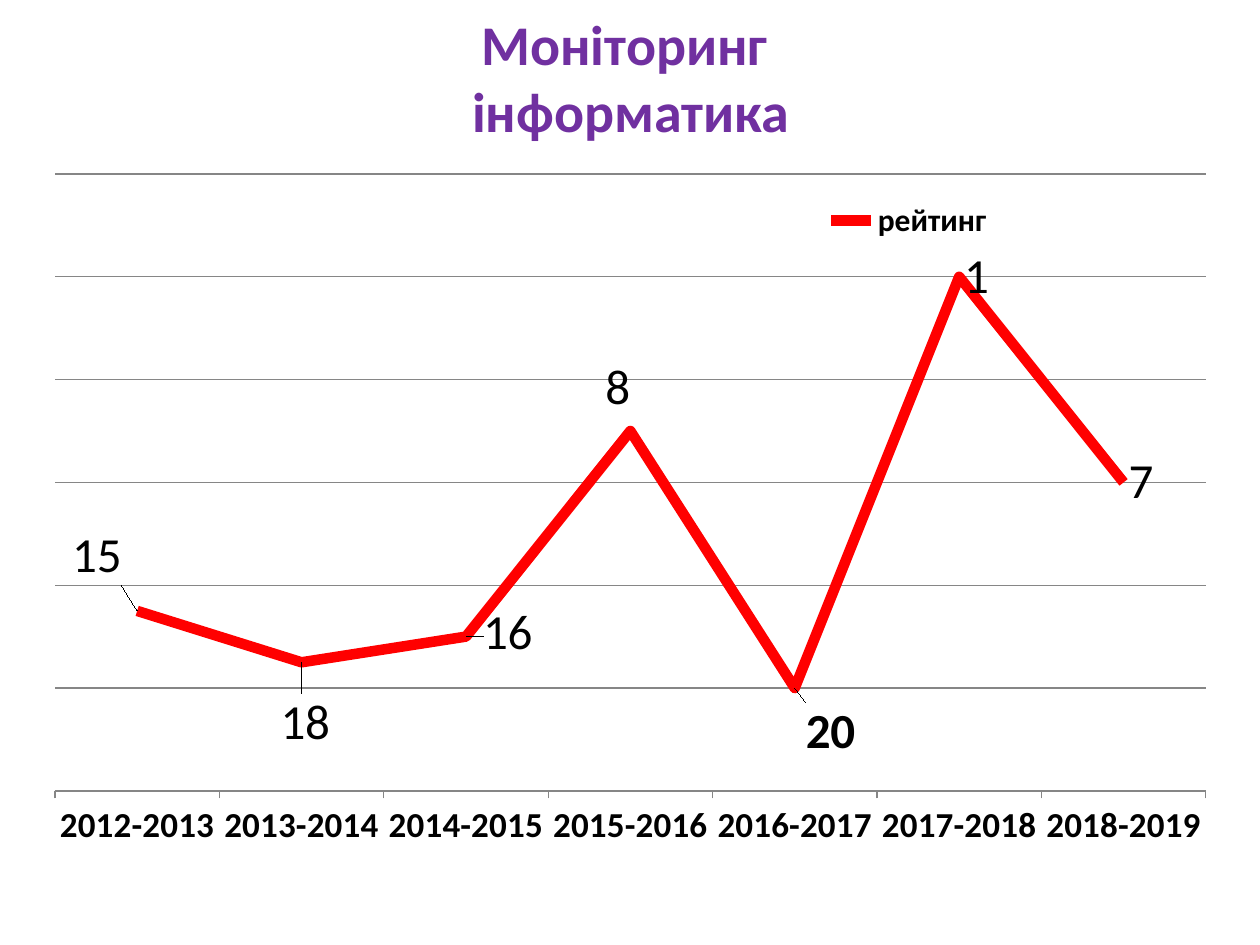
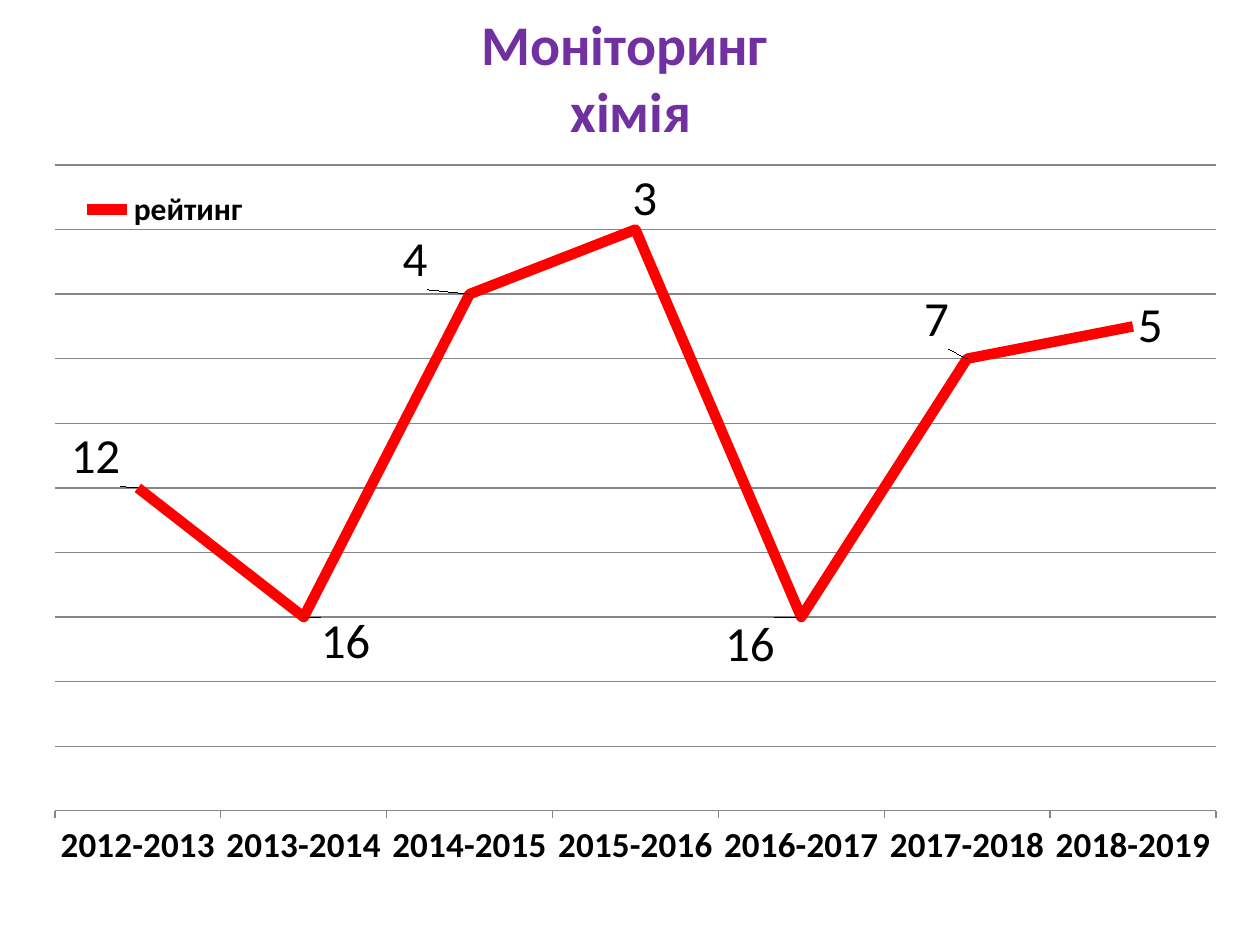
from dataclasses import dataclass

from pptx import Presentation
from pptx.chart.data import CategoryChartData
from pptx.dml.color import RGBColor
from pptx.enum.chart import (XL_CHART_TYPE, XL_LABEL_POSITION,
                             XL_LEGEND_POSITION, XL_TICK_MARK)
from pptx.enum.text import MSO_ANCHOR, MSO_AUTO_SIZE, PP_ALIGN
from pptx.oxml import parse_xml
from pptx.oxml.ns import nsdecls, qn
from pptx.util import Emu, Pt

YEARS = [f"{year}-{year + 1}" for year in range(2012, 2019)]
SERIES_NAME = "рейтинг "

# Each point: plotted value, rating shown (None shows the value),
# and how far its label is moved right and down.
SUBJECTS = [
    {
        "title": "Моніторинг \vінформатика",
        "points": [
            (35, "15", -70, -55), (25, "18", -26, 61), (30, "16", 12, -4),
            (70, "8", -30, -43), (20, None, 6, 44), (100, "1", 0, 0),
            (60, "7", 0, 0),
        ],
        "scale": (120, 20),
        "chart_left": 35,
        "plot": (20, 19, 1151, 617),
        "legend": (786, 40),
    },
    {
        "title": "Моніторинг \vхімія",
        "points": [
            (50, "12", -72, -31), (30, "16", 12, 25), (80, "4", -72, -34),
            (90, "3", -8, -30), (30, "16", -81, 28), (70, "7", -48, -39),
            (75, "5", 0, 0),
        ],
        "scale": (100, 10),
        "chart_left": 44,
        "plot": (11, 10, 1161, 646),
        "legend": (33, 29),
    },
]


@dataclass(frozen=True)
class Theme:
    font: str = "Calibri"
    title: RGBColor = RGBColor(0x70, 0x30, 0xA0)
    text: RGBColor = RGBColor(0, 0, 0)
    line: RGBColor = RGBColor(0xFF, 0, 0)
    grid: RGBColor = RGBColor(0x86, 0x86, 0x86)
    title_size: int = 32
    label_size: int = 28
    axis_size: int = 20
    chart_size: int = 18
    line_width: int = 6


THEME = Theme()
PX_PER_INCH = 126
SLIDE_W, SLIDE_H = 1260, 945
TITLE_BOX = (64, 66, 1134, 87)
TITLE_BOTTOM_INSET = 9
CHART_TOP, CHART_W, CHART_H = 155, 1181, 774
NO_LEADER_LINES = (
    f'<c:extLst {nsdecls("c")}>'
    '<c:ext uri="{CE6537A1-D6FC-4f65-9D91-7224C49458BB}"'
    ' xmlns:c15="http://schemas.microsoft.com/office/drawing/2012/chart">'
    '<c15:showLeaderLines val="0"/></c:ext></c:extLst>')


def px(n):
    return Emu(round(n * 914400 / PX_PER_INCH))


def style(font, size, color, bold=False):
    font.name = THEME.font
    font.size = Pt(size)
    font.bold = bold
    font.color.rgb = color


def manual_layout(x, y, w=None, h=None, edge=True):
    """Chart layout from px; edge=False means a shift from the usual place."""
    parts = []
    if w:
        parts.append('<c:layoutTarget val="inner"/>')
    if edge:
        parts.append('<c:xMode val="edge"/><c:yMode val="edge"/>')
    for name, n, whole in (("x", x, CHART_W), ("y", y, CHART_H),
                           ("w", w, CHART_W), ("h", h, CHART_H)):
        if n is not None:
            parts.append(f'<c:{name} val="{n / whole:.4f}"/>')
    return parse_xml(f'<c:layout {nsdecls("c")}><c:manualLayout>'
                     f'{"".join(parts)}</c:manualLayout></c:layout>')


def place(element, layout, index):
    for old in element.findall(qn("c:layout")):
        element.remove(old)
    element.insert(index, layout)


def add_title(s, text):
    title = s.shapes.title
    title.left, title.top, title.width, title.height = map(px, TITLE_BOX)
    tf = title.text_frame
    tf.text = text
    tf.auto_size = MSO_AUTO_SIZE.NONE
    tf.vertical_anchor = MSO_ANCHOR.BOTTOM
    tf.margin_bottom = px(TITLE_BOTTOM_INSET)
    p = tf.paragraphs[0]
    p.alignment = PP_ALIGN.CENTER
    style(p.font, THEME.title_size, THEME.title, bold=True)


def format_axes(chart, maximum, step):
    category = chart.category_axis
    category.major_tick_mark = XL_TICK_MARK.OUTSIDE
    category.format.line.color.rgb = THEME.grid
    style(category.tick_labels.font, THEME.axis_size, THEME.text, bold=True)
    value = chart.value_axis
    value.minimum_scale, value.maximum_scale = 0, maximum
    value.major_unit = step
    value.has_major_gridlines = True
    value.major_gridlines.format.line.color.rgb = THEME.grid
    value.major_gridlines.format.line.width = Pt(0.75)
    value.visible = False


def label_points(chart, series, points):
    series.data_labels.show_value = True
    style(series.data_labels.font, THEME.label_size, THEME.text, bold=True)
    for i, (_, rating, _, _) in enumerate(points):
        label = series.points[i].data_label
        if rating is None:
            style(label.font, THEME.label_size, THEME.text, bold=True)
        else:
            p = label.text_frame.paragraphs[0]
            r = p.add_run()
            r.text = rating
            style(r.font, THEME.label_size, THEME.text)
        label.position = XL_LABEL_POSITION.RIGHT
    for element, (_, _, dx, dy) in zip(chart.element.iter(qn("c:dLbl")), points):
        if dx or dy:
            place(element, manual_layout(dx, dy, edge=False), 1)
    labels = next(chart.element.iter(qn("c:dLbls")))
    labels.append(parse_xml(NO_LEADER_LINES))


def add_rating_chart(s, subject):
    data = CategoryChartData()
    data.categories = YEARS
    data.add_series(SERIES_NAME, [point[0] for point in subject["points"]])
    box = map(px, (subject["chart_left"], CHART_TOP, CHART_W, CHART_H))
    chart = s.shapes.add_chart(XL_CHART_TYPE.LINE, *box, data).chart
    chart.has_title = False
    style(chart.font, THEME.chart_size, THEME.text)
    format_axes(chart, *subject["scale"])

    chart.plots[0].vary_by_categories = False
    series = chart.plots[0].series[0]
    series.smooth = False
    series.format.line.color.rgb = THEME.line
    series.format.line.width = Pt(THEME.line_width)
    label_points(chart, series, subject["points"])

    chart.has_legend = True
    legend = chart.legend
    legend.position = XL_LEGEND_POSITION.RIGHT
    legend.include_in_layout = False
    style(legend.font, THEME.chart_size, THEME.text, bold=True)
    legend_element = next(chart.element.iter(qn("c:legend")))
    place(legend_element, manual_layout(*subject["legend"]), 1)
    plot_area = next(chart.element.iter(qn("c:plotArea")))
    place(plot_area, manual_layout(*subject["plot"]), 0)


def main():
    prs = Presentation()
    prs.slide_width, prs.slide_height = px(SLIDE_W), px(SLIDE_H)
    for subject in SUBJECTS:
        s = prs.slides.add_slide(prs.slide_layouts[5])
        add_title(s, subject["title"])
        add_rating_chart(s, subject)
    prs.save("out.pptx")


if __name__ == "__main__":
    main()
